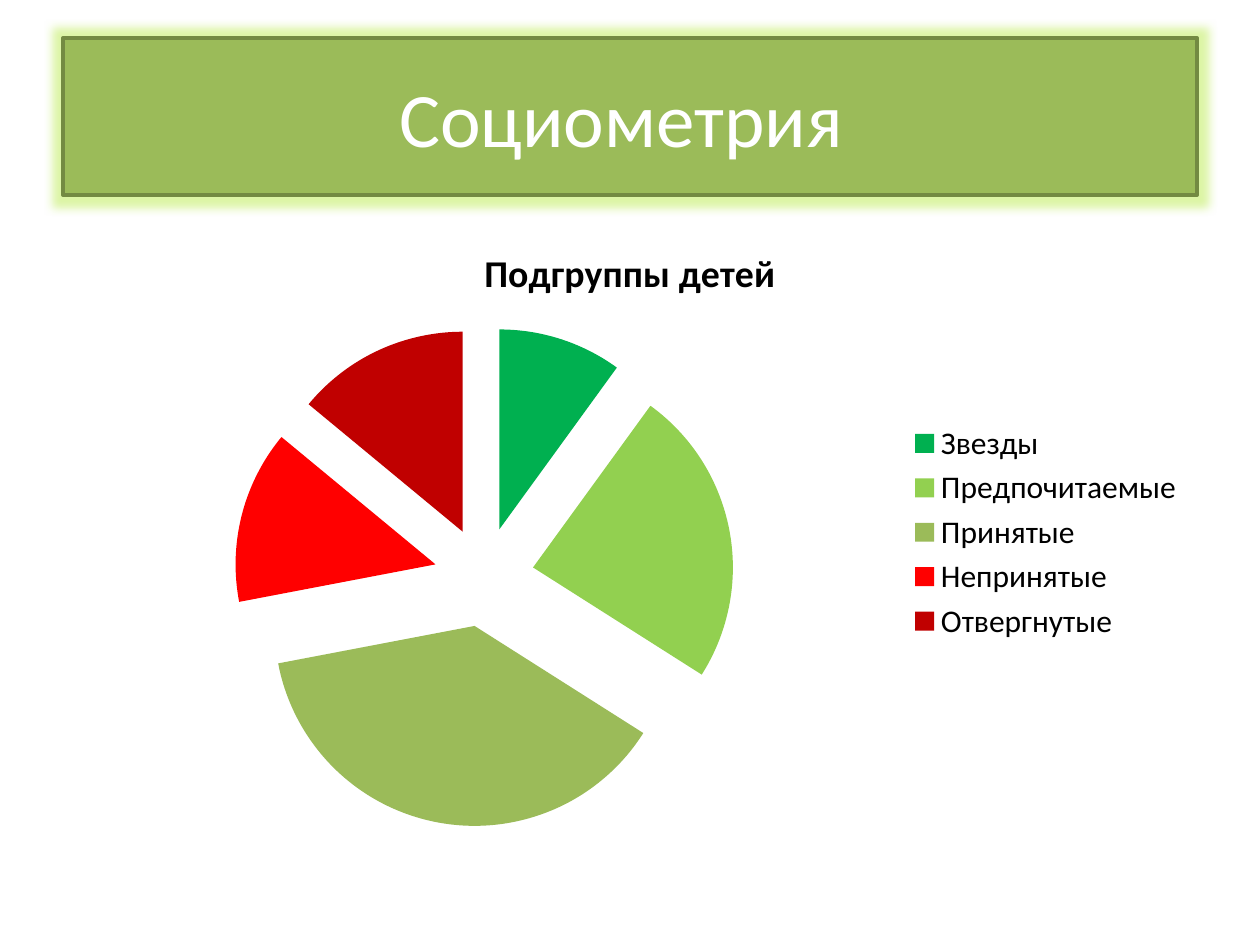
from lxml import etree
from pptx import Presentation
from pptx.chart.data import CategoryChartData
from pptx.dml.color import RGBColor
from pptx.enum.chart import XL_CHART_TYPE, XL_LEGEND_POSITION
from pptx.enum.text import MSO_ANCHOR, PP_ALIGN
from pptx.oxml.ns import qn
from pptx.util import Inches, Pt

PIE = XL_CHART_TYPE.PIE
LEGEND_RIGHT = XL_LEGEND_POSITION.RIGHT
MIDDLE = MSO_ANCHOR.MIDDLE
CENTER = PP_ALIGN.CENTER
TITLE_ONLY = 5

COLORS = {
    "olive": "9BBB59",
    "olive_edge": "738A42",
    "glow": "A9E620",
    "white": "FFFFFF",
    "black": "000000",
    "green": "00B050",
    "lime": "92D050",
    "red": "FF0000",
    "dark_red": "C00000",
}

SUBGROUPS = [
    ("Звезды", 10, "green"),
    ("Предпочитаемые", 24, "lime"),
    ("Принятые", 38, "olive"),
    ("Непринятые", 14, "red"),
    ("Отвергнутые", 14, "dark_red"),
]


def rgb(name):
    return RGBColor.from_string(COLORS[name])


class SlideBuilder:
    font_name = "Calibri"
    margin = 0.05

    def __init__(self, presentation):
        self.width = presentation.slide_width
        self.height = presentation.slide_height
        layout = presentation.slide_layouts[TITLE_ONLY]
        self.slide = presentation.slides.add_slide(layout)

    def band(self, top, height):
        return (
            round(self.width * self.margin),
            round(self.height * top),
            round(self.width * (1 - 2 * self.margin)),
            round(self.height * height),
        )

    def style(self, font, size, color, bold=False):
        font.name = self.font_name
        font.size = Pt(size)
        font.bold = bold
        font.color.rgb = rgb(color)

    def glow(self, shape, color, radius, opacity):
        shape.shadow.inherit = False
        effects = shape.element.spPr.find(qn("a:effectLst"))
        halo = etree.SubElement(effects, qn("a:glow"), rad=str(Pt(radius)))
        tint = etree.SubElement(halo, qn("a:srgbClr"), val=COLORS[color])
        etree.SubElement(tint, qn("a:alpha"), val=str(opacity * 1000))

    def title(self, text, top, height):
        heading = self.slide.shapes.title
        heading.left, heading.top, heading.width, heading.height = self.band(top, height)
        heading.fill.solid()
        heading.fill.fore_color.rgb = rgb("olive")
        heading.line.color.rgb = rgb("olive_edge")
        heading.line.width = Pt(2)
        self.glow(heading, "glow", 11, 40)
        heading.text_frame.text = text
        heading.text_frame.vertical_anchor = MIDDLE
        paragraph = heading.text_frame.paragraphs[0]
        paragraph.alignment = CENTER
        self.style(paragraph.runs[0].font, 44, "white")

    def pie(self, name, slices, top, height, explosion):
        data = CategoryChartData()
        data.categories = [label for label, _, _ in slices]
        data.add_series(name, [share for _, share, _ in slices])
        chart = self.slide.shapes.add_chart(PIE, *self.band(top, height), data).chart
        self.style(chart.font, 18, "black")

        chart.has_title = True
        caption = chart.chart_title.text_frame
        caption.text = name
        self.style(caption.paragraphs[0].runs[0].font, 21.6, "black", bold=True)
        chart.chart_title.include_in_layout = False

        chart.has_legend = True
        chart.legend.position = LEGEND_RIGHT
        chart.legend.include_in_layout = False

        plot = chart.plots[0]
        plot.vary_by_categories = True
        series = plot.series[0]
        offset = etree.Element(qn("c:explosion"), val=str(explosion))
        series._element.find(qn("c:tx")).addnext(offset)
        for index, (_, _, color) in enumerate(slices):
            fill = series.points[index].format.fill
            fill.solid()
            fill.fore_color.rgb = rgb(color)
            offset = etree.Element(qn("c:explosion"), val=str(explosion))
            point = series._element.findall(qn("c:dPt"))[index]
            point.find(qn("c:spPr")).addprevious(offset)


def main():
    presentation = Presentation()
    presentation.slide_width = Inches(10)
    presentation.slide_height = Inches(7.5)
    builder = SlideBuilder(presentation)
    builder.title("Социометрия ", top=0.04, height=1 / 6)
    builder.pie("Подгруппы детей", SUBGROUPS, top=7 / 30, height=0.66, explosion=25)
    presentation.save("out.pptx")


if __name__ == "__main__":
    main()
